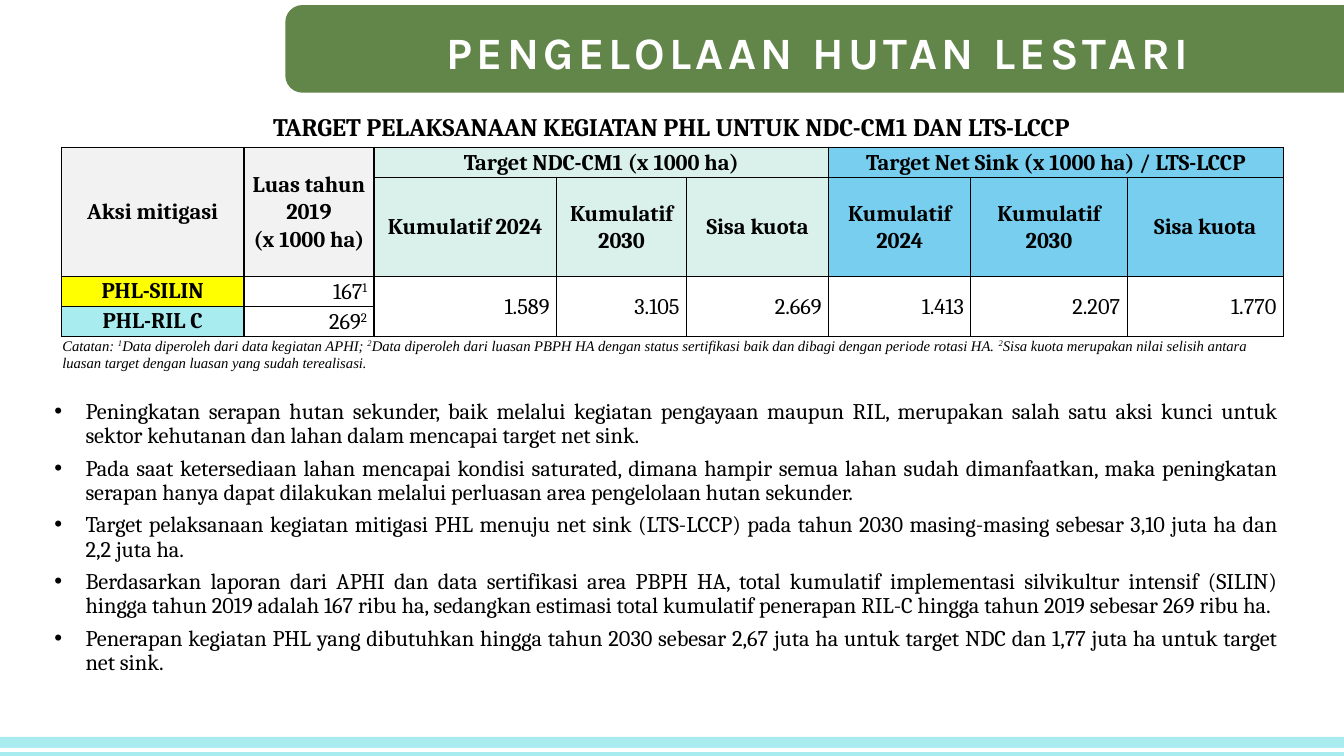
from dataclasses import dataclass
from typing import Optional

from lxml.etree import SubElement
from pptx import Presentation
from pptx.dml.color import RGBColor
from pptx.enum.shapes import MSO_SHAPE
from pptx.enum.text import MSO_ANCHOR, MSO_AUTO_SIZE, PP_ALIGN
from pptx.oxml.ns import qn
from pptx.util import Inches, Pt


@dataclass(frozen=True)
class Theme:
    green: str = "62854A"
    aqua: str = "A8ECEF"
    white: str = "FFFFFF"
    black: str = "000000"
    grey: str = "F2F2F2"
    mint: str = "D9F1EA"
    sky: str = "77CEEF"
    yellow: str = "FFFF00"
    serif: str = "Cambria"
    heading: str = "Karla"
    note: str = "Times New Roman"
    title_size: float = 32
    caption_size: float = 18
    body_size: float = 16
    note_size: float = 10.5


T = Theme()


@dataclass(frozen=True)
class Bar:
    left: float
    top: float
    width: float
    height: float
    color: str
    radius: float = 0


@dataclass(frozen=True)
class CellSpec:
    row: int
    col: int
    text: str
    fill: Optional[str] = None
    rows: int = 1
    cols: int = 1
    align: PP_ALIGN = PP_ALIGN.CENTER
    bold: bool = True
    anchor: MSO_ANCHOR = MSO_ANCHOR.MIDDLE


BARS = [
    Bar(2.83, 0.05, 11.23, 0.87, T.green, 0.196),
    Bar(0, 7.31, 13.33, 0.2, T.aqua),
    Bar(0, 7.42, 13.33, 0.04, T.white),
]
COL_WIDTHS = [1.81, 1.29, 1.81, 1.29, 1.41, 1.41, 1.55, 1.55]
ROW_HEIGHTS = [0.3, 0.98, 0.3, 0.3]
GROUPS = [
    (2, "Target NDC-CM1 (x 1000 ha)", T.mint, ["1.589", "3.105", "2.669"]),
    (5, "Target Net Sink (x 1000 ha) / LTS-LCCP", T.sky, ["1.413", "2.207", "1.770"]),
]
SUBHEADS = ["Kumulatif 2024", "Kumulatif 2030", "Sisa kuota"]
ACTIONS = [("PHL-SILIN", "167^1", T.yellow), ("PHL-RIL C", "269^2", T.aqua)]
NOTE = (
    "Catatan: ^1Data diperoleh dari data kegiatan APHI; ^2Data diperoleh dari luasan PBPH HA "
    "dengan status sertifikasi baik dan dibagi dengan periode rotasi HA. ^2Sisa kuota merupakan "
    "nilai selisih antara luasan target dengan luasan yang sudah terealisasi."
)
POINTS = [
    "Peningkatan serapan hutan sekunder, baik melalui kegiatan pengayaan maupun RIL, merupakan "
    "salah satu aksi kunci untuk sektor kehutanan dan lahan dalam mencapai target net sink.",
    "Pada saat ketersediaan lahan mencapai kondisi saturated, dimana hampir semua lahan sudah "
    "dimanfaatkan, maka peningkatan serapan hanya dapat dilakukan melalui perluasan area "
    "pengelolaan hutan sekunder.",
    "Target pelaksanaan kegiatan mitigasi PHL menuju net sink (LTS-LCCP) pada tahun 2030 "
    "masing-masing sebesar 3,10 juta ha dan 2,2 juta ha.",
    "Berdasarkan laporan dari APHI dan data sertifikasi area PBPH HA, total kumulatif "
    "implementasi silvikultur intensif (SILIN) hingga tahun 2019 adalah 167 ribu ha, sedangkan "
    "estimasi total kumulatif penerapan RIL-C hingga tahun 2019 sebesar 269 ribu ha.",
    "Penerapan kegiatan PHL yang dibutuhkan hingga tahun 2030 sebesar 2,67 juta ha untuk target "
    "NDC dan 1,77 juta ha untuk target net sink.",
]


def write(tf, text: str, *, size: float = T.body_size, font: str = T.serif,
          color: str = T.black, bold: bool = False, italic: bool = False,
          align: PP_ALIGN = PP_ALIGN.LEFT, line: float = 1.0, after: float = 0,
          spacing: float = 0, bullet: bool = False) -> None:
    for i, content in enumerate(text.split("\n")):
        p = tf.add_paragraph() if i else tf.paragraphs[0]
        if bullet:
            pPr = p._p.get_or_add_pPr()
            pPr.set("marL", str(Inches(0.31)))
            pPr.set("indent", str(-Inches(0.31)))
            SubElement(pPr, qn("a:buFont"), typeface="Arial")
            SubElement(pPr, qn("a:buChar"), char="•")
        p.alignment = align
        p.line_spacing = line
        p.space_after = Pt(after)
        first, *marked = content.split("^")
        parts = [(first, False)]
        for part in marked:
            parts += [(part[0], True), (part[1:], False)]
        for value, raised in parts:
            if not value:
                continue
            r = p.add_run()
            r.text = value
            r.font.size = Pt(size)
            r.font.name = font
            r.font.bold = bold
            r.font.italic = italic
            r.font.color.rgb = RGBColor.from_string(color)
            if raised:
                r.font._element.set("baseline", "30000")
            if spacing:
                r.font._element.set("spc", str(int(spacing * 100)))


def add_text(s, left: float, top: float, width: float, height: float, text: str,
             **fmt) -> None:
    tf = s.shapes.add_textbox(Inches(left), Inches(top), Inches(width), Inches(height)).text_frame
    tf.word_wrap = True
    tf.auto_size = MSO_AUTO_SIZE.SHAPE_TO_FIT_TEXT
    write(tf, text, **fmt)


def add_bar(s, bar: Bar) -> None:
    sp = s.shapes.add_shape(MSO_SHAPE.ROUNDED_RECTANGLE, Inches(bar.left), Inches(bar.top),
                            Inches(bar.width), Inches(bar.height))
    sp.adjustments[0] = bar.radius
    sp.shadow.inherit = False
    sp.fill.solid()
    sp.fill.fore_color.rgb = RGBColor.from_string(bar.color)
    sp.line.fill.background()


def style_cell(cell) -> None:
    cell.margin_left = cell.margin_right = Inches(0.07)
    cell.margin_top = cell.margin_bottom = 0
    tcPr = cell._tc.get_or_add_tcPr()
    for side in "LRTB":
        ln = SubElement(tcPr, qn(f"a:ln{side}"), w=str(Pt(1)))
        SubElement(SubElement(ln, qn("a:solidFill")), qn("a:srgbClr"), val=T.black)
    cell.fill.background()


def table_cells() -> list[CellSpec]:
    cells = [
        CellSpec(0, 0, "Aksi mitigasi", T.grey, rows=2),
        CellSpec(0, 1, "Luas tahun 2019\n(x 1000 ha)", T.grey, rows=2),
    ]
    for start, title, fill, values in GROUPS:
        cells.append(CellSpec(0, start, title, fill, cols=3))
        for col, (subhead, value) in enumerate(zip(SUBHEADS, values), start):
            cells.append(CellSpec(1, col, subhead, fill))
            cells.append(CellSpec(2, col, value, rows=2, align=PP_ALIGN.RIGHT, bold=False))
    for row, (action, area, fill) in enumerate(ACTIONS, 2):
        cells.append(CellSpec(row, 0, action, fill, anchor=MSO_ANCHOR.TOP))
        cells.append(CellSpec(row, 1, area, align=PP_ALIGN.RIGHT, bold=False))
    return cells


def add_target_table(s) -> None:
    table = s.shapes.add_table(len(ROW_HEIGHTS), len(COL_WIDTHS), Inches(0.61), Inches(1.46),
                               Inches(sum(COL_WIDTHS)), Inches(sum(ROW_HEIGHTS))).table
    table.first_row = table.horz_banding = False
    for column, width in zip(table.columns, COL_WIDTHS):
        column.width = Inches(width)
    for row, height in zip(table.rows, ROW_HEIGHTS):
        row.height = Inches(height)
    for cell in table.iter_cells():
        style_cell(cell)
    for c in table_cells():
        cell = table.cell(c.row, c.col)
        if c.rows > 1 or c.cols > 1:
            cell.merge(table.cell(c.row + c.rows - 1, c.col + c.cols - 1))
        cell.vertical_anchor = c.anchor
        if c.fill:
            cell.fill.solid()
            cell.fill.fore_color.rgb = RGBColor.from_string(c.fill)
        write(cell.text_frame, c.text, bold=c.bold, align=c.align, line=1.07)


def main() -> None:
    prs = Presentation()
    prs.slide_width, prs.slide_height = Inches(13.33), Inches(7.5)
    s = prs.slides.add_slide(prs.slide_layouts[6])
    for bar in BARS:
        add_bar(s, bar)
    add_text(s, 3.29, 0.2, 9.64, 0.64, "PENGELOLAAN HUTAN LESTARI", size=T.title_size,
             font=T.heading, color=T.white, bold=True, align=PP_ALIGN.CENTER, spacing=3)
    add_text(s, 0.44, 3.92, 12.34, 3.1, "\n".join(POINTS), align=PP_ALIGN.JUSTIFY,
             line=0.9, after=6, bullet=True)
    add_target_table(s)
    add_text(s, 0.6, 1.06, 12.12, 0.4,
             "TARGET PELAKSANAAN KEGIATAN PHL UNTUK NDC-CM1 DAN LTS-LCCP",
             size=T.caption_size, bold=True, align=PP_ALIGN.CENTER)
    add_text(s, 0.52, 3.29, 12.2, 0.45, NOTE, size=T.note_size, font=T.note, italic=True)
    prs.save("out.pptx")


if __name__ == "__main__":
    main()
